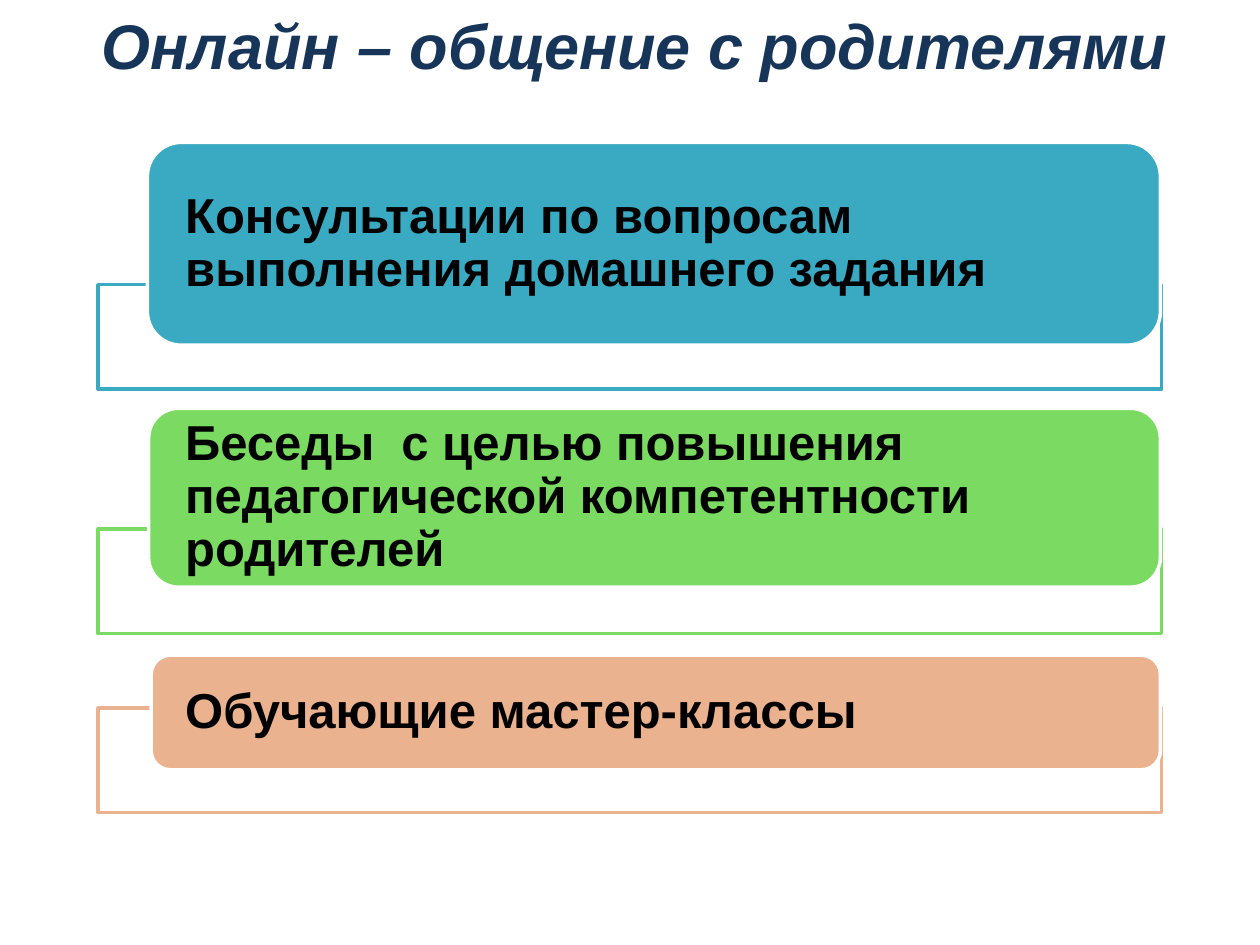
from pptx import Presentation
from pptx.dml.color import RGBColor
from pptx.enum.shapes import MSO_SHAPE
from pptx.enum.text import MSO_ANCHOR, PP_ALIGN
from pptx.util import Inches, Pt

RECT, ROUNDED = MSO_SHAPE.RECTANGLE, MSO_SHAPE.ROUNDED_RECTANGLE
LEFT, CENTER = PP_ALIGN.LEFT, PP_ALIGN.CENTER
TOP, MIDDLE = MSO_ANCHOR.TOP, MSO_ANCHOR.MIDDLE

WHITE = RGBColor(0xFF, 0xFF, 0xFF)
BLACK = RGBColor(0x00, 0x00, 0x00)
NAVY = RGBColor(0x16, 0x35, 0x58)
TEAL = RGBColor(0x3A, 0xA9, 0xC2)
GREEN = RGBColor(0x7B, 0xDA, 0x61)
PEACH = RGBColor(0xEB, 0xB2, 0x8F)

FRAME_LEFT, FRAME_WIDTH, FRAME_HEIGHT = 0.78, 8.44, 0.83
TEXT_LEFT = 1.47
CARD_RIGHT = 9.21

# Text, colour, frame top, then card left, top and height
TOPICS = [
    ("Консультации по вопросам выполнения домашнего задания",
     TEAL, 2.26, 1.17, 1.13, 1.61),
    ("Беседы  с целью повышения педагогической компетентности родителей",
     GREEN, 4.2, 1.18, 3.24, 1.42),
    ("Обучающие мастер-классы",
     PEACH, 5.62, 1.2, 5.2, 0.91),
]


def write(frame, text, size=28, color=BLACK, italic=False, align=LEFT,
          anchor=MIDDLE, spacing=0.9):
    frame.word_wrap = True
    frame.vertical_anchor = anchor
    paragraph = frame.paragraphs[0]
    paragraph.alignment = align
    paragraph.line_spacing = spacing
    run = paragraph.add_run()
    run.text = text
    font = run.font
    font.name, font.size, font.bold, font.italic = "Arial", Pt(size), True, italic
    font.color.rgb = color


class Deck:
    """Holds the line style and the current slide."""
    line_width = Pt(2)

    def __init__(self, slide):
        self.slide = slide

    def heading(self, text, left, top, width, height):
        box = self.slide.shapes.add_textbox(
            Inches(left), Inches(top), Inches(width), Inches(height))
        write(box.text_frame, text, size=36, color=NAVY, italic=True,
              align=CENTER, anchor=TOP, spacing=1.0)

    def block(self, kind, left, top, width, height, fill, line):
        block = self.slide.shapes.add_shape(
            kind, Inches(left), Inches(top), Inches(width), Inches(height))
        block.shadow.inherit = False
        block.fill.solid()
        block.fill.fore_color.rgb = fill
        block.line.color.rgb = line
        block.line.width = self.line_width
        return block

    def topic(self, text, color, frame_top, left, top, height):
        self.block(RECT, FRAME_LEFT, frame_top, FRAME_WIDTH, FRAME_HEIGHT,
                   WHITE, color)
        card = self.block(ROUNDED, left, top, CARD_RIGHT - left, height,
                          color, WHITE)
        body = card.text_frame
        # Inner margins line the texts up, allowing for the corner inset
        corner = 0.29 * card.adjustments[0] * height
        body.margin_left = Inches(TEXT_LEFT - left - corner)
        body.margin_right = Inches(0.22)
        body.margin_top = body.margin_bottom = 0
        write(body, text)


def main():
    prs = Presentation()
    prs.slide_width, prs.slide_height = Inches(10), Inches(7.5)
    deck = Deck(prs.slides.add_slide(prs.slide_layouts[6]))

    # Title
    deck.heading("Онлайн – общение с родителями", 0.39, 0, 9.3, 0.71)

    # Topic cards over their frames
    for topic in TOPICS:
        deck.topic(*topic)

    prs.save("out.pptx")


if __name__ == "__main__":
    main()
